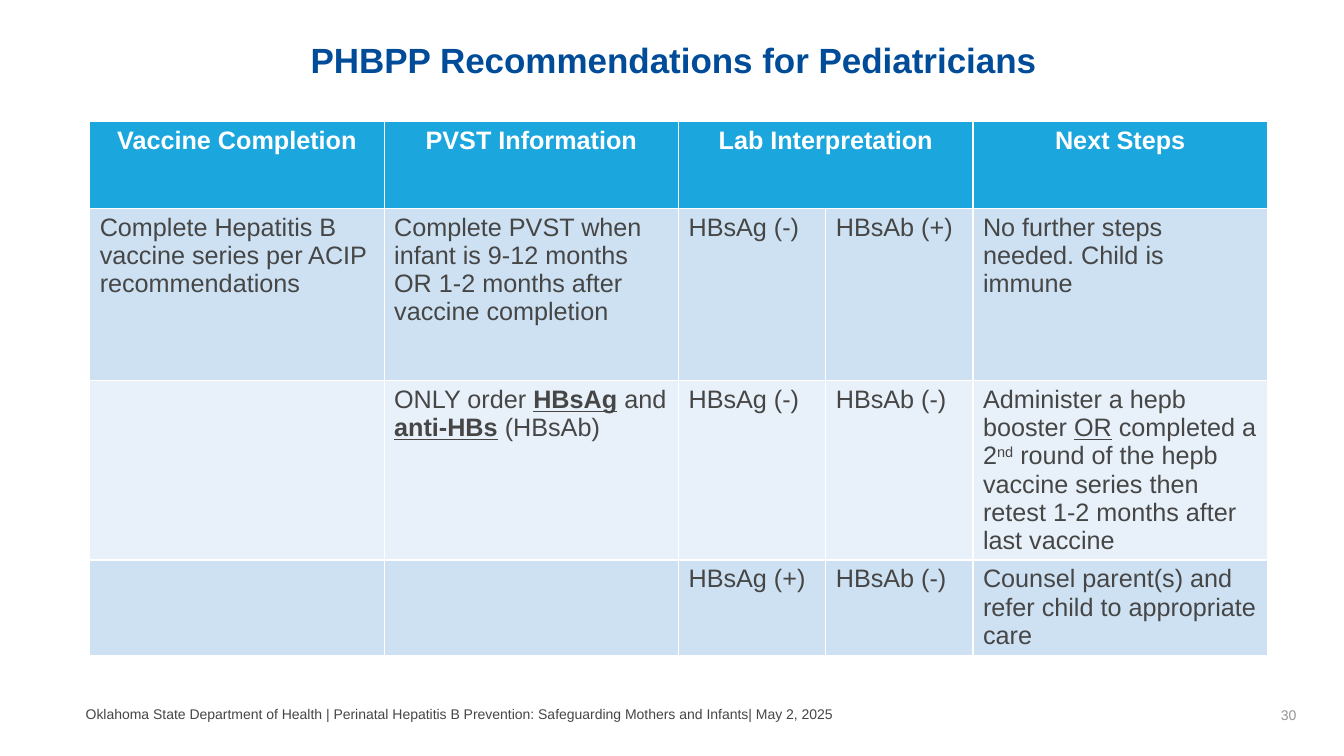
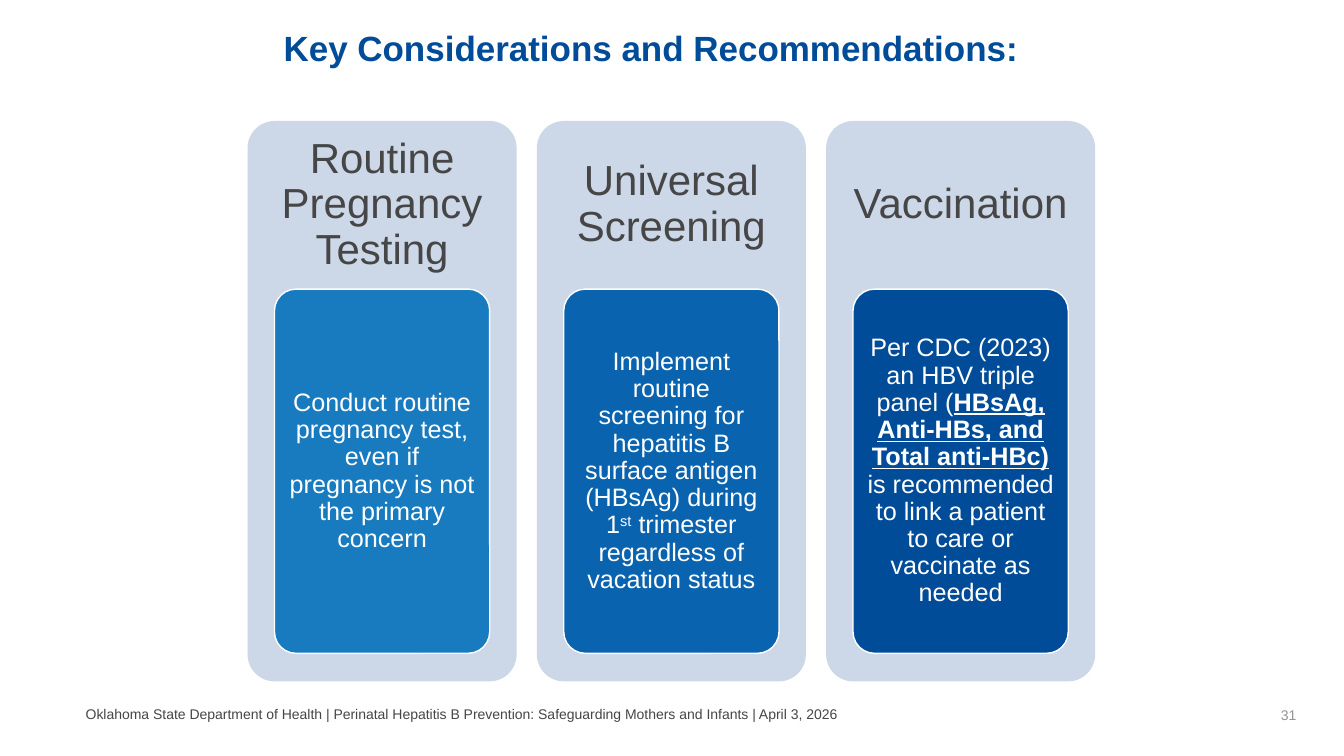
from dataclasses import dataclass

from pptx import Presentation
from pptx import util as u
from pptx.dml.color import RGBColor
from pptx.enum import shapes, text

Cm, Pt = u.Cm, u.Pt
LEFT, CENTER, RIGHT = text.PP_ALIGN.LEFT, text.PP_ALIGN.CENTER, text.PP_ALIGN.RIGHT
TOP, MIDDLE = text.MSO_ANCHOR.TOP, text.MSO_ANCHOR.MIDDLE


@dataclass(frozen=True)
class Theme:
    font: str = "Arial"
    navy: str = "004C99"
    ink: str = "464646"
    grey: str = "949494"
    white: str = "FFFFFF"
    header: str = "1CA6DE"
    bands: tuple = ("CDE1F2", "E8F1F9")
    panel: str = "CCD7E8"
    cards: tuple = ("187BC0", "0A63AE", "004C99")
    title_size: int = 25
    heading_size: int = 30
    body_size: int = 18
    footer_size: int = 10


T = Theme()
FOOTER = ("Oklahoma State Department of Health | Perinatal Hepatitis B Prevention: "
          "Safeguarding Mothers and Infants")

# Text is a string, or a list of (text, marks) with marks "b", "u" and "^" (superscript)
TABLE_ROWS = [
    ["Vaccine Completion", "PVST Information", "Lab Interpretation", "", "Next Steps"],
    ["Complete Hepatitis B vaccine series per ACIP recommendations",
     "Complete PVST when infant is 9-12 months OR 1-2 months after vaccine completion",
     "HBsAg (-)", "HBsAb (+)", "No further steps needed. Child is immune"],
    ["",
     [("ONLY order ", ""), ("HBsAg", "bu"), (" and ", ""), ("anti-HBs", "bu"),
      (" (HBsAb)", "")],
     "HBsAg (-)", "HBsAb (-)",
     [("Administer a hepb booster ", ""), ("OR", "u"), (" completed a 2", ""), ("nd", "^"),
      (" round of the hepb vaccine series then retest 1-2 months after last vaccine", "")]],
    ["", "", "HBsAg (+)", "HBsAb (-)",
     "Counsel parent(s) and refer child to appropriate care"],
]
COL_WIDTHS = (7.42, 7.42, 3.71, 3.71, 7.42)
ROW_HEIGHTS = (2.18, 4.34, 4.52, 2.4)

CARDS = [
    ("Routine Pregnancy Testing",
     "Conduct routine pregnancy test, even if pregnancy is not the primary concern"),
    ("Universal Screening",
     [("Implement routine screening for hepatitis B surface antigen (HBsAg) during 1", ""),
      ("st", "^"), (" trimester regardless of vacation status", "")]),
    ("Vaccination",
     [("Per CDC (2023) an HBV triple panel (", ""),
      ("HBsAg, Anti-HBs, and Total anti-HBc) ", "bu"),
      ("is recommended to link a patient to care or vaccinate as needed", "")]),
]


def rgb(value):
    return RGBColor.from_string(value)


def write(tf, content, size, color, align=LEFT, bold=False, spacing=None):
    """Fill the first paragraph of a text frame with marked runs."""
    p = tf.paragraphs[0]
    p.alignment = align
    p.font.size = Pt(size)
    if spacing:
        p.line_spacing = spacing
    runs = [(content, "")] if isinstance(content, str) else content
    for words, marks in runs:
        if not words:
            continue
        r = p.add_run()
        r.text = words
        f = r.font
        f.name, f.size, f.color.rgb = T.font, Pt(size), rgb(color)
        f.bold = bold or "b" in marks
        f.underline = "u" in marks
        if "^" in marks:
            r._r.get_or_add_rPr().set("baseline", "30000")


def frame(sp, insets, anchor):
    """Set wrapping, insets (left, top, right, bottom) and anchor; return the frame."""
    tf = sp.text_frame
    tf.word_wrap = True
    tf.auto_size = text.MSO_AUTO_SIZE.NONE
    tf.vertical_anchor = anchor
    tf.margin_left, tf.margin_top, tf.margin_right, tf.margin_bottom = map(Cm, insets)
    return tf


def text_box(s, box, insets):
    return frame(s.shapes.add_textbox(*map(Cm, box)), insets, MIDDLE)


def round_box(s, box, fill, line=None):
    sp = s.shapes.add_shape(shapes.MSO_SHAPE.ROUNDED_RECTANGLE, *map(Cm, box))
    sp.adjustments[0] = 0.1
    sp.shadow.inherit = False
    sp.fill.solid()
    sp.fill.fore_color.rgb = rgb(fill)
    if line:
        sp.line.color.rgb = rgb(line)
        sp.line.width = Pt(1)
    else:
        sp.line.fill.background()
    return sp


def base_slide(prs, title, title_box, number, footer):
    """Add a slide with its title, page number and footer."""
    s = prs.slides.add_slide(prs.slide_layouts[5])
    sp = s.shapes.title
    sp.left, sp.top, sp.width, sp.height = map(Cm, title_box)
    tf = frame(sp, (0, 0.13, 0.25, 0.13), TOP)
    write(tf, title, T.title_size, T.navy, CENTER, bold=True)

    tf = text_box(s, (25.3, 17.73, 7.62, 0.56), (0.25, 0.13, 0.25, 0.13))
    write(tf, str(number), T.footer_size, T.grey, RIGHT)
    tf = text_box(s, (2.16, 17.7, 22.6, 0.56), (0, 0.13, 0.25, 0.13))
    write(tf, footer, T.footer_size, T.ink)
    return s


def recommendations_table(s, left, top):
    size = sum(COL_WIDTHS), sum(ROW_HEIGHTS)
    tbl = s.shapes.add_table(len(TABLE_ROWS), len(COL_WIDTHS),
                             *map(Cm, (left, top, *size))).table
    for col, width in zip(tbl.columns, COL_WIDTHS):
        col.width = Cm(width)
    for row, height in zip(tbl.rows, ROW_HEIGHTS):
        row.height = Cm(height)
    tbl.cell(0, 2).merge(tbl.cell(0, 3))

    for i, row in enumerate(TABLE_ROWS):
        head = i == 0
        for j, content in enumerate(row):
            cell = tbl.cell(i, j)
            cell.fill.solid()
            cell.fill.fore_color.rgb = rgb(T.header if head else T.bands[(i - 1) % 2])
            write(cell.text_frame, content, T.body_size, T.white if head else T.ink,
                  CENTER if head else LEFT, bold=head)


def card(s, box, heading, body, color):
    """Draw a panel with a heading in its top 30% and a coloured card below."""
    x, y, w, h = box
    round_box(s, box, T.panel)
    tf = text_box(s, (x, y, w, 0.3 * h), (0.3, 0.3, 0.3, 0.3))
    write(tf, heading, T.heading_size, T.ink, CENTER, spacing=0.9)

    sp = round_box(s, (x + 0.1 * w, y + 0.3 * h, 0.8 * w, 0.65 * h), color, T.white)
    tf = frame(sp, (0.13, 0.1, 0.13, 0.1), MIDDLE)
    write(tf, body, T.body_size, T.white, CENTER, spacing=0.9)


def card_row(s, left, top, width, height, gap):
    w = (width - gap * (len(CARDS) - 1)) / len(CARDS)
    for i, ((heading, body), color) in enumerate(zip(CARDS, T.cards)):
        card(s, (left + i * (w + gap), top, w, height), heading, body, color)


def main():
    prs = Presentation()
    prs.slide_width, prs.slide_height = Cm(33.87), Cm(19.05)

    # Table of recommendations
    s = base_slide(prs, "PHBPP Recommendations for Pediatricians",
                   (1.27, 0.84, 31.65, 1.35), 30, FOOTER + "| May 2, 2025")
    recommendations_table(s, 2.26, 3.07)

    # Three considerations
    s = base_slide(prs, "Key Considerations and Recommendations:",
                   (4.62, 0.53, 23.8, 2), 31, FOOTER + " | April 3, 2026")
    card_row(s, 6.24, 3.05, 21.36, 14.12, 0.51)

    prs.save("out.pptx")


if __name__ == "__main__":
    main()
